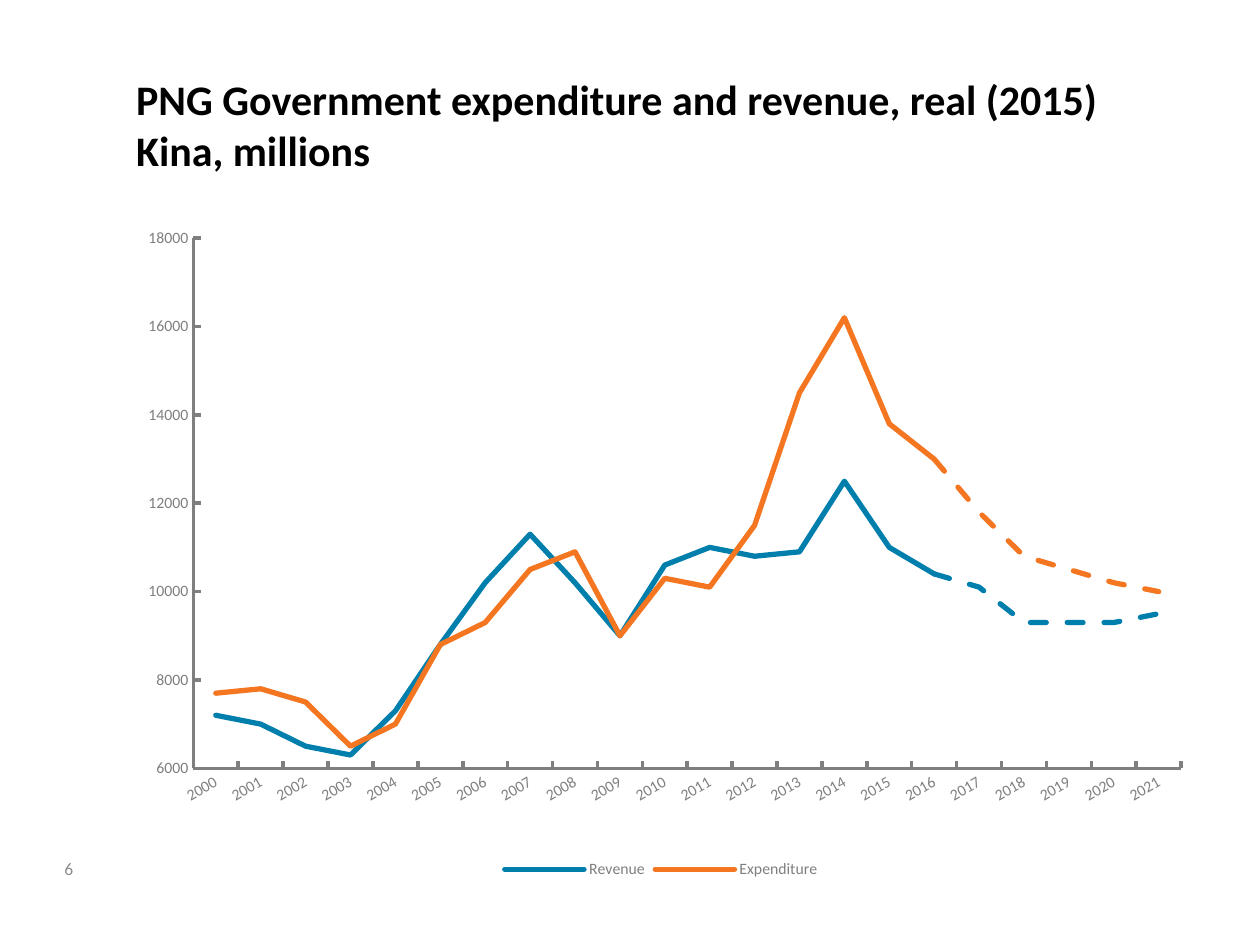
from dataclasses import dataclass

from lxml import etree
from pptx import Presentation
from pptx import util as u
from pptx.chart import data as chart_data
from pptx.dml.color import RGBColor
from pptx.enum import chart as charts
from pptx.enum import dml, text
from pptx.oxml.ns import qn

FONT = "Calibri"
GREY, BLUE, ORANGE = "7F7F7F", "007FAD", "F47621"
YEARS = range(2000, 2022)
FORECAST_START = 2016
YEAR_LABEL_ANGLE = -30
PLOT_AREA = {"x": 0.065, "y": 0.069, "w": 0.919, "h": 0.765}


@dataclass
class Line:
    name: str
    color: str
    first_year: int
    values: list[int]
    dashed: bool = False

    def by_year(self) -> list[int | None]:
        known = dict(enumerate(self.values, self.first_year))
        return [known.get(year) for year in YEARS]


LINES = [
    Line("Revenue", BLUE, 2000,
         [7200, 7000, 6500, 6300, 7300, 8800, 10200, 11300, 10200, 9000, 10600,
          11000, 10800, 10900, 12500, 11000, 10400]),
    Line("Expenditure", ORANGE, 2000,
         [7700, 7800, 7500, 6500, 7000, 8800, 9300, 10500, 10900, 9000, 10300,
          10100, 11500, 14500, 16200, 13800, 13000]),
    Line("Series 3", BLUE, FORECAST_START,
         [10400, 10100, 9300, 9300, 9300, 9500], dashed=True),
    Line("Series 4", ORANGE, FORECAST_START,
         [13000, 11800, 10800, 10500, 10200, 10000], dashed=True),
]


def rgb(color: str) -> RGBColor:
    return RGBColor.from_string(color)


def format_font(font, size: float, color: str, bold: bool = False) -> None:
    font.name, font.size, font.bold = FONT, u.Pt(size), bold
    font.color.rgb = rgb(color)


def write(box, words: str, *, size: float, color: str, bold: bool = False,
          anchor=text.MSO_ANCHOR.TOP) -> None:
    frame = box.text_frame
    frame.word_wrap = True
    frame.auto_size = text.MSO_AUTO_SIZE.NONE
    frame.vertical_anchor = anchor
    para = frame.paragraphs[0]
    para.alignment = text.PP_ALIGN.LEFT
    span = para.add_run()
    span.text = words
    format_font(span.font, size, color, bold)


def add_title(page) -> None:
    title = page.shapes.title
    title.left, title.top = u.Cm(2.49), u.Cm(1.35)
    title.width, title.height = u.Cm(20.29), u.Cm(2.31)
    write(title, "PNG Government expenditure and revenue, real (2015) Kina, millions",
          size=24, color="000000", bold=True, anchor=text.MSO_ANCHOR.MIDDLE)


def add_page_number(page) -> None:
    box = page.shapes.add_textbox(u.Cm(1.3), u.Cm(17.3), u.Cm(12.5), u.Cm(0.51))
    frame = box.text_frame
    frame.margin_left = frame.margin_top = frame.margin_right = frame.margin_bottom = 0
    write(box, "6", size=10, color="8C8C8C")


def format_axis(axis) -> None:
    axis.has_major_gridlines = False
    axis.major_tick_mark = charts.XL_TICK_MARK.INSIDE
    axis.minor_tick_mark = charts.XL_TICK_MARK.NONE
    axis.format.line.color.rgb = rgb(GREY)
    axis.format.line.width = u.Pt(2)
    format_font(axis.tick_labels.font, 9, GREY)


def rotate_labels(axis, degrees: int) -> None:
    body = axis._element.find(qn("c:txPr")).find(qn("a:bodyPr"))
    body.set("rot", str(degrees * 60000))
    body.set("vert", "horz")


def format_series(series, line: Line) -> None:
    series.smooth = False
    series.marker.style = charts.XL_MARKER_STYLE.NONE
    stroke = series.format.line
    stroke.color.rgb = rgb(line.color)
    stroke.width = u.Pt(3)
    if line.dashed:
        stroke.dash_style = dml.MSO_LINE.DASH
    for outline in series._element.xpath("c:spPr/a:ln"):
        outline.set("cap", "rnd")


def place_plot(chart) -> None:
    """Fix the inner plot area as fractions of the chart."""
    plot_area = chart._chartSpace.chart.plotArea
    for old in plot_area.findall(qn("c:layout")):
        plot_area.remove(old)
    layout = etree.Element(qn("c:layout"))
    manual = etree.SubElement(layout, qn("c:manualLayout"))
    settings = {"layoutTarget": "inner", "xMode": "edge", "yMode": "edge", **PLOT_AREA}
    for tag, value in settings.items():
        etree.SubElement(manual, qn(f"c:{tag}")).set("val", str(value))
    plot_area.insert(0, layout)


def add_legend(chart) -> None:
    """Show a legend that leaves out the dashed forecast lines."""
    chart.has_legend = True
    legend = chart.legend
    legend.position = charts.XL_LEGEND_POSITION.BOTTOM
    legend.include_in_layout = False
    format_font(legend.font, 9, GREY)
    previous = legend._element.find(qn("c:legendPos"))
    for index, line in enumerate(LINES):
        if line.dashed:
            entry = etree.Element(qn("c:legendEntry"))
            etree.SubElement(entry, qn("c:idx")).set("val", str(index))
            etree.SubElement(entry, qn("c:delete")).set("val", "1")
            previous.addnext(entry)
            previous = entry


def add_line_chart(page) -> None:
    data = chart_data.CategoryChartData()
    data.categories = [str(year) for year in YEARS]
    for line in LINES:
        data.add_series(line.name, line.by_year())
    chart = page.shapes.add_chart(
        charts.XL_CHART_TYPE.LINE, u.Cm(2.49), u.Cm(3.84), u.Cm(21.67), u.Cm(13.97),
        data).chart
    chart.has_title = False
    format_font(chart.font, 10, "000000")
    chart.plots[0].vary_by_categories = False
    for series, line in zip(chart.plots[0].series, LINES):
        format_series(series, line)
    for axis in (chart.category_axis, chart.value_axis):
        format_axis(axis)
    rotate_labels(chart.category_axis, YEAR_LABEL_ANGLE)
    scale = chart.value_axis
    scale.minimum_scale, scale.maximum_scale, scale.major_unit = 6000, 18000, 2000
    place_plot(chart)
    add_legend(chart)


def main() -> None:
    deck = Presentation()
    deck.slide_width, deck.slide_height = u.Cm(25.4), u.Cm(19.05)
    page = deck.slides.add_slide(deck.slide_layouts.get_by_name("Title Only"))
    add_title(page)
    add_page_number(page)
    add_line_chart(page)
    deck.save("out.pptx")


if __name__ == "__main__":
    main()
